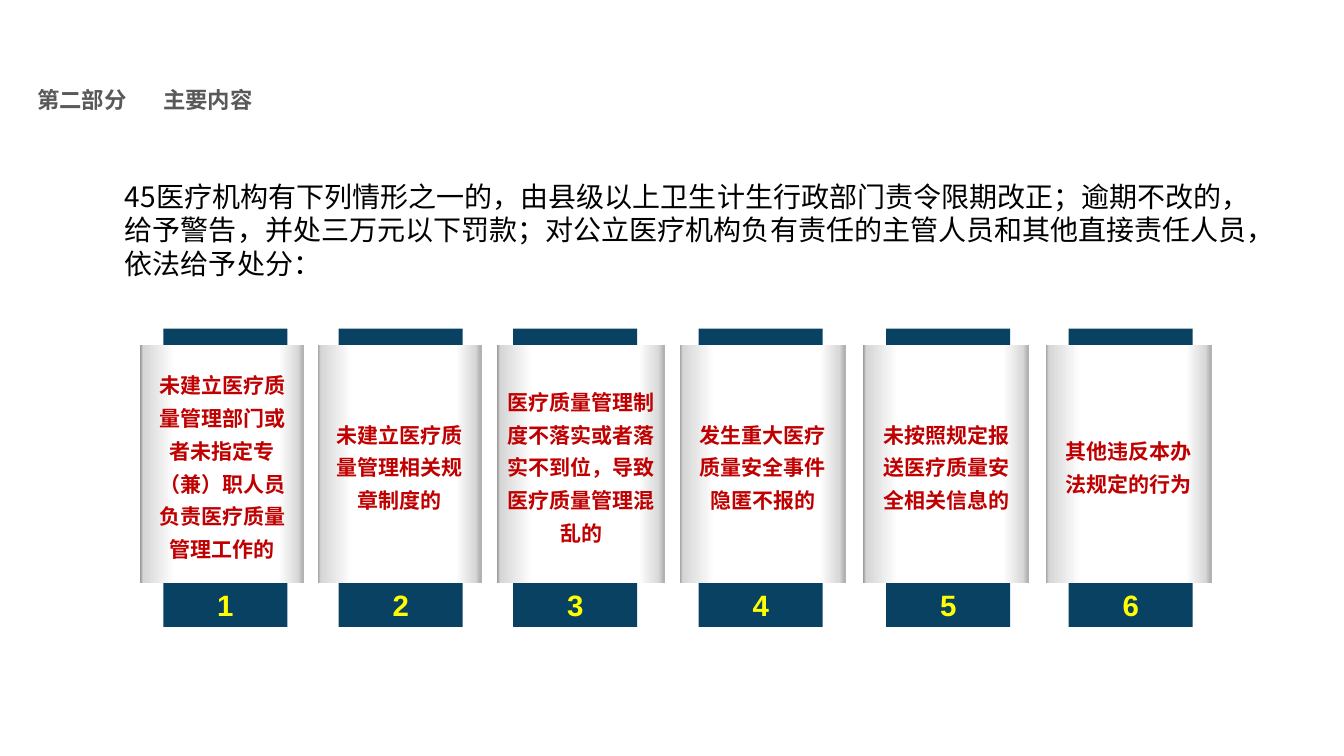
import math
from lxml import etree
from pptx import Presentation
from pptx import util as u
from pptx.dml.color import RGBColor
from pptx.enum import shapes, text
from pptx.oxml.ns import qn

# Content
HEADINGS = [  # left, width, wording
    (0.27, 1.12, "第二部分"),
    (1.52, 3.1, "主要内容"),
]
INTRO = ("45医疗机构有下列情形之一的，由县级以上卫生计生行政部门责令限期改正；"
         "逾期不改的，给予警告，并处三万元以下罚款；"
         "对公立医疗机构负有责任的主管人员和其他直接责任人员，依法给予处分：")
CARDS = [  # strip left, card left, card width, wording
    (1.62, 1.39, 1.63, "未建立医疗质量管理部门或者未指定专（兼）职人员负责医疗质量管理工作的"),
    (3.36, 3.15, 1.63, "未建立医疗质量管理相关规章制度的"),
    (5.09, 4.93, 1.67, "医疗质量管理制度不落实或者落实不到位，导致医疗质量管理混乱的"),
    (6.93, 6.74, 1.65, "发生重大医疗质量安全事件隐匿不报的"),
    (8.79, 8.56, 1.65, "未按照规定报送医疗质量安全相关信息的"),
    (10.6, 10.37, 1.65, "其他违反本办法规定的行为"),
]

# Format
COLORS = {"heading": "595959", "body": "000000", "gear": "0F3D4C",
          "strip": "094162", "number": "FFFF00", "card": "C00000"}
SHEEN = [(0, "959595"), (2, "D6D6D6"), (21, "FFFFFF"), (85, "FCFCFC"),
         (96, "D8D8D8"), (99, "B2B2B2"), (100, "B2B2B2")]
CJK = "Noto Sans CJK SC"
FONTS = {
    "heading": {"size": u.Pt(16), "name": CJK, "bold": True},
    "body": {"size": u.Pt(20), "name": CJK, "bold": False},
    "number": {"size": u.Pt(21), "name": "Arial", "bold": True},
    "card": {"size": u.Pt(15), "name": CJK, "bold": True},
}
STRIP_TOP, STRIP_W, STRIP_H = 3.26, 1.23, 2.96
CARD_TOP, CARD_H = 3.42, 2.36
GEAR_X, GEAR_Y, GEAR_TEETH = 1.0, 1.92, 6
TIP_R, ROOT_R, HOLE_R = 0.16, 0.11, 0.03

prs = Presentation()
prs.slide_width, prs.slide_height = u.Inches(13.33), u.Inches(7.5)
slide = prs.slides.add_slide(prs.slide_layouts[6])


def write(sp, wording, style, anchor, align=text.PP_ALIGN.LEFT, spacing=None):
    tf = sp.text_frame
    tf.word_wrap, tf.vertical_anchor = True, anchor
    p = tf.paragraphs[0]
    p.alignment, p.line_spacing = align, spacing
    r = p.add_run()
    r.text = wording
    for key, value in FONTS[style].items():
        setattr(r.font, key, value)
    r.font.color.rgb = RGBColor.from_string(COLORS[style])
    ea = etree.SubElement(r.font._element, qn("a:ea"))
    ea.set("typeface", FONTS[style]["name"])


def textbox(left, top, width, height, wording, style, anchor):
    sp = slide.shapes.add_textbox(*map(u.Inches, (left, top, width, height)))
    write(sp, wording, style, anchor)


def rect(left, top, width, height):
    sp = slide.shapes.add_shape(shapes.MSO_SHAPE.RECTANGLE,
                                *map(u.Inches, (left, top, width, height)))
    sp.shadow.inherit = False
    sp.line.fill.background()
    return sp


def solid(sp, name):
    sp.fill.solid()
    sp.fill.fore_color.rgb = RGBColor.from_string(COLORS[name])


def sheen(sp):
    sp.fill.gradient()
    sp.fill.gradient_angle = 0
    stops = sp._element.spPr.find(qn("a:gradFill")).find(qn("a:gsLst"))
    for old in list(stops):
        stops.remove(old)
    for pos, color in SHEEN:
        gs = etree.SubElement(stops, qn("a:gs"), pos=str(pos * 1000))
        etree.SubElement(gs, qn("a:srgbClr"), val=color)


def polar(radius, degrees):
    angle = math.radians(degrees)
    return GEAR_X + radius * math.cos(angle), GEAR_Y + radius * math.sin(angle)


# Headings and introduction
for left, width, wording in HEADINGS:
    textbox(left, 0.8, width, 0.37, wording, "heading", text.MSO_ANCHOR.MIDDLE)
textbox(1.14, 1.73, 11.43, 1.11, INTRO, "body", text.MSO_ANCHOR.TOP)

# Gear bullet: toothed rim and round hole
rim = [polar(radius, tooth * 360 / GEAR_TEETH - 15 + offset)
       for tooth in range(GEAR_TEETH)
       for radius, offset in ((ROOT_R, -25), (TIP_R, -11), (TIP_R, 11), (ROOT_R, 25))]
hole = [polar(HOLE_R, step * 20) for step in range(18)]
gear = slide.shapes.build_freeform(*rim[0], scale=u.Inches(1))
gear.add_line_segments(rim[1:], close=True)
gear.move_to(*hole[0])
gear.add_line_segments(hole[1:], close=True)
sp = gear.convert_to_shape()
sp.shadow.inherit = False
sp.line.fill.background()
solid(sp, "gear")

# Numbered strips with a card over each
for number, (strip_left, card_left, card_width, wording) in enumerate(CARDS, 1):
    strip = rect(strip_left, STRIP_TOP, STRIP_W, STRIP_H)
    solid(strip, "strip")
    write(strip, str(number), "number", text.MSO_ANCHOR.BOTTOM, text.PP_ALIGN.CENTER)
    card = rect(card_left, CARD_TOP, card_width, CARD_H)
    sheen(card)
    write(card, wording, "card", text.MSO_ANCHOR.MIDDLE, text.PP_ALIGN.CENTER, 1.3)

prs.save("out.pptx")
